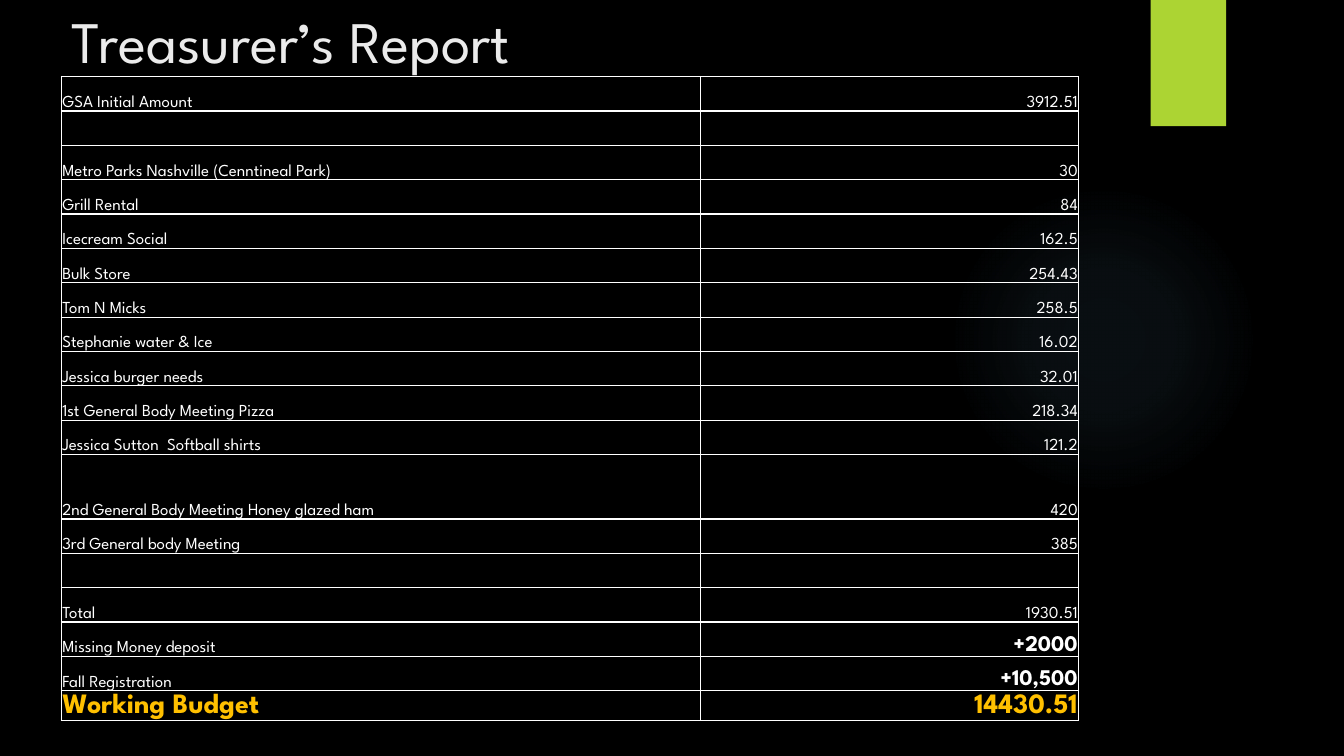
import pptx
import pptx.dml.color
import pptx.enum.shapes
import pptx.enum.text
import pptx.oxml
import pptx.oxml.ns
import pptx.util
from pptx.util import Cm

FONT = "League Spartan"
COLOURS = {
    "background": "000000",
    "title": "EBEBEB",
    "text": "FFFFFF",
    "budget": "FFC000",
    "glow": "7AC4F0",
    "tab": "ACD433",
}

# Text style of a cell: size, bold, colour
PLAIN = (12, False, "text")
INCOME = (16, True, "text")
BUDGET = (20, True, "budget")

# Label, amount, label style, amount style
REPORT = [
    ("GSA Initial Amount", "3912.51", PLAIN, PLAIN),
    ("", "", PLAIN, PLAIN),
    ("Metro Parks Nashville (Cenntineal Park)", "30", PLAIN, PLAIN),
    ("Grill Rental", "84", PLAIN, PLAIN),
    ("Icecream Social", "162.5", PLAIN, PLAIN),
    ("Bulk Store", "254.43", PLAIN, PLAIN),
    ("Tom N Micks", "258.5", PLAIN, PLAIN),
    ("Stephanie water & Ice", "16.02", PLAIN, PLAIN),
    ("Jessica burger needs", "32.01", PLAIN, PLAIN),
    ("1st General Body Meeting Pizza", "218.34", PLAIN, PLAIN),
    ("Jessica Sutton  Softball shirts", "121.2", PLAIN, PLAIN),
    ("2nd General Body Meeting Honey glazed ham", "420", PLAIN, PLAIN),
    ("3rd General body Meeting", "385", PLAIN, PLAIN),
    ("", "", PLAIN, PLAIN),
    ("Total", "1930.51", PLAIN, PLAIN),
    ("Missing Money deposit", "+2000", PLAIN, INCOME),
    ("Fall Registration", "+10,500", PLAIN, INCOME),
    ("Working Budget", "14430.51", BUDGET, BUDGET),
]

# Two rows have their own height; the others share the rest equally
TABLE_HEIGHT = 16.23
SPECIAL_HEIGHTS = {11: 1.62, 17: 0.74}
ROW_HEIGHT = (TABLE_HEIGHT - sum(SPECIAL_HEIGHTS.values())) / (len(REPORT) - len(SPECIAL_HEIGHTS))


def colour(name):
    return pptx.dml.color.RGBColor.from_string(COLOURS[name])


def add_run(paragraph, text, size, bold, colour_name):
    run = paragraph.add_run()
    run.text = text
    run.font.name = FONT
    run.font.size = pptx.util.Pt(size)
    run.font.bold = bold
    run.font.color.rgb = colour(colour_name)


def add_plain_shape(slide, kind, left, top, width, height):
    shape = slide.shapes.add_shape(kind, Cm(left), Cm(top), Cm(width), Cm(height))
    shape.shadow.inherit = False
    shape.line.fill.background()
    return shape


def add_glow(slide):
    """Soft disc that fades out from its centre."""
    shape = add_plain_shape(slide, pptx.enum.shapes.MSO_SHAPE.OVAL, 23.9, 4.65, 7.82, 7.82)
    stops = "".join(
        f'<a:gs pos="{position * 1000}"><a:srgbClr val="{COLOURS["glow"]}">'
        f'<a:alpha val="{opacity * 1000}"/></a:srgbClr></a:gs>'
        for position, opacity in [(0, 7), (36, 6), (69, 0), (100, 0)]
    )
    gradient = pptx.oxml.parse_xml(
        f'<a:gradFill {pptx.oxml.ns.nsdecls("a")}><a:gsLst>{stops}</a:gsLst>'
        '<a:path path="circle"><a:fillToRect l="50000" t="50000" r="50000" b="50000"/>'
        "</a:path></a:gradFill>"
    )
    shape.element.spPr.find(pptx.oxml.ns.qn("a:prstGeom")).addnext(gradient)


def add_corner_tab(slide):
    shape = add_plain_shape(slide, pptx.enum.shapes.MSO_SHAPE.RECTANGLE, 29, 0, 1.9, 3.18)
    shape.fill.solid()
    shape.fill.fore_color.rgb = colour("tab")


def fill_title(slide, text):
    title = slide.shapes.title
    title.left, title.top, title.width, title.height = Cm(1.55), Cm(0), Cm(27.91), Cm(3.89)
    frame = title.text_frame
    frame.word_wrap = True
    frame.vertical_anchor = pptx.enum.text.MSO_ANCHOR.TOP
    frame.margin_top = Cm(0.12)
    paragraph = frame.paragraphs[0]
    paragraph.alignment = pptx.enum.text.PP_ALIGN.LEFT
    add_run(paragraph, text, 42, False, "title")


def add_borders(cell):
    properties = cell._tc.get_or_add_tcPr()
    for side in ("lnL", "lnR", "lnT", "lnB"):
        properties.append(pptx.oxml.parse_xml(
            f'<a:{side} {pptx.oxml.ns.nsdecls("a")} w="12700"><a:solidFill>'
            f'<a:srgbClr val="{COLOURS["text"]}"/></a:solidFill></a:{side}>'
        ))


def fill_cell(cell, text, style, alignment):
    add_borders(cell)
    cell.fill.background()
    cell.vertical_anchor = pptx.enum.text.MSO_ANCHOR.BOTTOM
    cell.margin_left = cell.margin_right = cell.margin_top = Cm(0.02)
    cell.margin_bottom = Cm(0)
    if text:
        paragraph = cell.text_frame.paragraphs[0]
        paragraph.alignment = alignment
        add_run(paragraph, text, *style)


def add_report_table(slide):
    widths = [16.1, 9.53]
    frame = slide.shapes.add_table(
        len(REPORT), len(widths), Cm(1.55), Cm(1.93), Cm(sum(widths)), Cm(TABLE_HEIGHT))
    table = frame.table
    table.first_row = table.horz_banding = False
    for column, width in zip(table.columns, widths):
        column.width = Cm(width)
    align = pptx.enum.text.PP_ALIGN
    for index, (label, amount, label_style, amount_style) in enumerate(REPORT):
        table.rows[index].height = Cm(SPECIAL_HEIGHTS.get(index, ROW_HEIGHT))
        fill_cell(table.cell(index, 0), label, label_style, align.LEFT)
        fill_cell(table.cell(index, 1), amount, amount_style, align.RIGHT)


def main():
    presentation = pptx.Presentation()
    presentation.slide_width, presentation.slide_height = Cm(33.87), Cm(19.05)
    # Title Only layout
    slide = presentation.slides.add_slide(presentation.slide_layouts[5])
    slide.background.fill.solid()
    slide.background.fill.fore_color.rgb = colour("background")

    # Decoration
    add_glow(slide)
    add_corner_tab(slide)

    # Content
    fill_title(slide, "Treasurer’s Report")
    add_report_table(slide)

    presentation.save("out.pptx")


if __name__ == "__main__":
    main()
